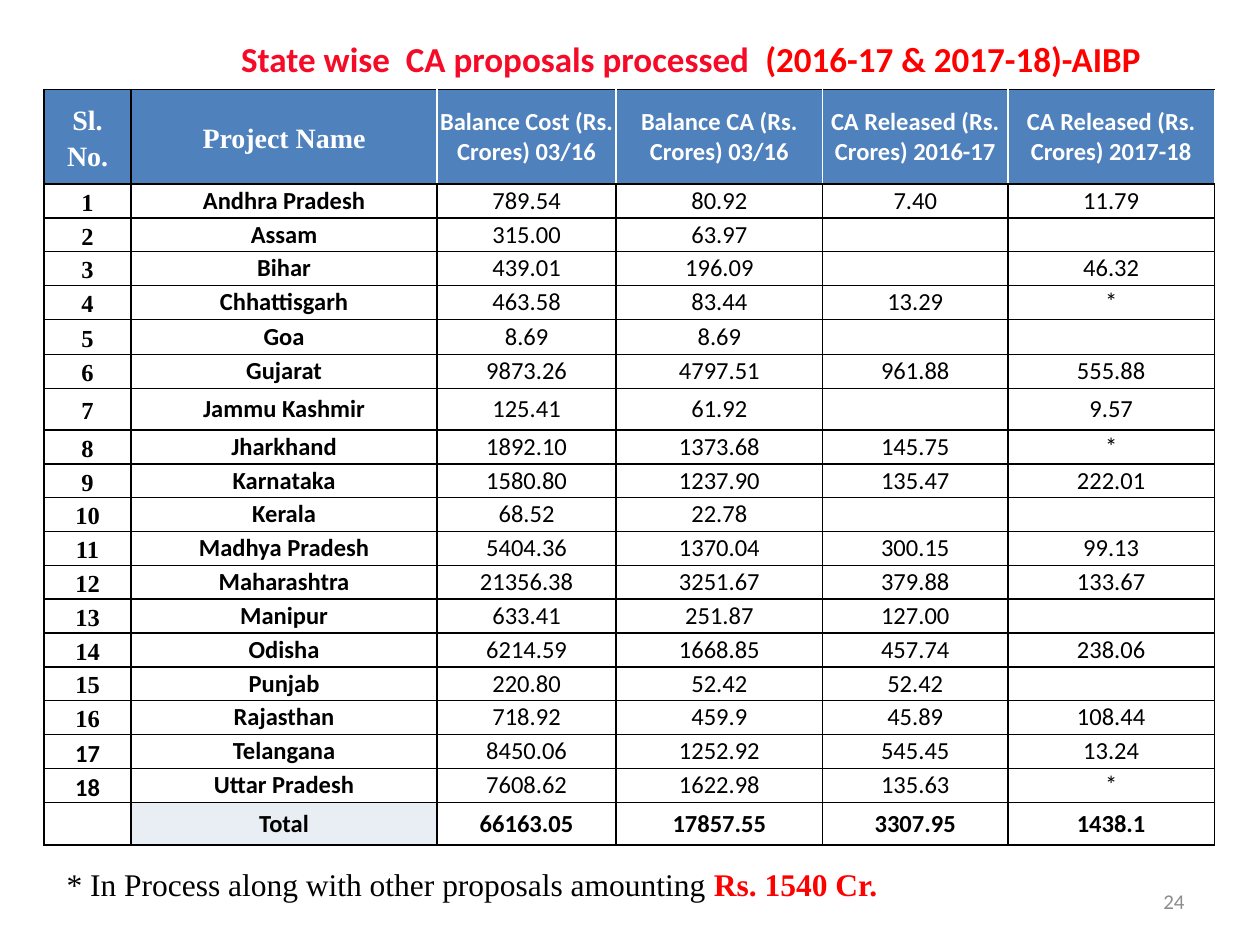
from lxml.etree import SubElement
from pptx import Presentation
from pptx.dml.color import RGBColor
from pptx.enum.text import MSO_ANCHOR, PP_ALIGN
from pptx.oxml.ns import qn
from pptx.util import Inches, Pt

SERIF, SANS = "Times New Roman", "Calibri"
BLACK, WHITE, RED, BLUE = "000000", "FFFFFF", "FF0000", "4F81BD"

COLS = [0.69, 2.43, 1.42, 1.64, 1.47, 1.64]
ROW_H = 0.26
TALL_ROWS = {0: 0.51, 1: 0.75, 6: 0.28, 8: 0.33, 18: 0.27, 19: 0.27, 20: 0.34}
TITLE = [("State wise  CA proposals processed ", "F50B27"),
         (" (2016-17 & 2017-18)-AIBP", RED)]
HEADER = ["Sl. No.", "Project Name", "Balance Cost (Rs. Crores) 03/16",
          "Balance CA (Rs. Crores) 03/16", "CA Released (Rs. Crores) 2016-17",
          "CA Released (Rs. Crores) 2017-18"]
STATES = [
    ("Andhra Pradesh", "789.54", "80.92", "7.40", "11.79"),
    ("Assam", "315.00", "63.97", "", ""),
    ("Bihar", "439.01", "196.09", "", "46.32"),
    ("Chhattisgarh", "463.58", "83.44", "13.29", "*"),
    ("Goa", "8.69", "8.69", "", ""),
    ("Gujarat", "9873.26", "4797.51", "961.88", "555.88"),
    ("Jammu Kashmir", "125.41", "61.92", "", "9.57"),
    ("Jharkhand", "1892.10", "1373.68", "145.75", "*"),
    ("Karnataka", "1580.80", "1237.90", "135.47", "222.01"),
    ("Kerala", "68.52", "22.78", "", ""),
    ("Madhya Pradesh", "5404.36", "1370.04", "300.15", "99.13"),
    ("Maharashtra", "21356.38", "3251.67", "379.88", "133.67"),
    ("Manipur", "633.41", "251.87", "127.00", ""),
    ("Odisha", "6214.59", "1668.85", "457.74", "238.06"),
    ("Punjab", "220.80", "52.42", "52.42", ""),
    ("Rajasthan", "718.92", "459.9", "45.89", "108.44"),
    ("Telangana", "8450.06", "1252.92", "545.45", "13.24"),
    ("Uttar Pradesh", "7608.62", "1622.98", "135.63", "*"),
]
TOTAL = ["", "Total", "66163.05", "17857.55", "3307.95", "1438.1"]


def rgb(color):
    return RGBColor.from_string(color)


def set_font(font, size, name, color, bold=False):
    font.size, font.name, font.bold = Pt(size), name, bold
    font.color.rgb = rgb(color)


def add_runs(p, parts):
    for text, color in parts:
        r = p.add_run()
        r.text = text
        r.font.color.rgb = rgb(color)


def set_borders(cell, left=BLACK, right=BLACK, top=BLACK, bottom=BLACK):
    tcPr = cell._tc.get_or_add_tcPr()
    sides = [("a:lnL", left), ("a:lnR", right), ("a:lnT", top), ("a:lnB", bottom)]
    for i, (tag, color) in enumerate(sides):
        ln = SubElement(tcPr, qn(tag), w=str(Pt(1)))
        fill = SubElement(ln, qn("a:solidFill"))
        SubElement(fill, qn("a:srgbClr"), val=color)
        tcPr.insert(i, ln)


def format_cell(cell, text, fill, size, name, color, bold, side=0.01, spacing=None):
    cell.fill.solid()
    cell.fill.fore_color.rgb = rgb(fill)
    cell.vertical_anchor = MSO_ANCHOR.MIDDLE
    cell.margin_left = cell.margin_right = Inches(side)
    cell.margin_top = cell.margin_bottom = 0
    p = cell.text_frame.paragraphs[0]
    p.alignment = PP_ALIGN.CENTER
    p.line_spacing = spacing
    set_font(p.font, size, name, color, bold)
    if text:
        p.add_run().text = text


def fill_title_row(table):
    last = len(COLS) - 1
    for c in range(last + 1):
        cell = table.cell(0, c)
        format_cell(cell, "", WHITE, 20, SANS, RED, True, 0.07, 1.15)
        set_borders(cell, WHITE, WHITE, WHITE)
    cell = table.cell(0, 0)
    cell.merge(table.cell(0, last))
    cell.margin_left = Inches(1.05)
    add_runs(cell.text_frame.paragraphs[0], TITLE)


def fill_header_row(table):
    for c, text in enumerate(HEADER):
        cell = table.cell(1, c)
        if c < 2:
            format_cell(cell, text, BLUE, 16, SERIF, WHITE, True, 0.07, 1.15)
        else:
            format_cell(cell, text, BLUE, 14, SANS, WHITE, True)
        set_borders(cell, left=WHITE if c > 1 else BLACK,
                    right=WHITE if c > 0 else BLACK)


def fill_body_row(table, row, values, number_font=SERIF, total=False):
    for c, text in enumerate(values):
        cell = table.cell(row, c)
        fill = "E9EDF4" if total and c == 1 else WHITE
        if c == 0:
            format_cell(cell, text, fill, 14, number_font, BLACK, True, 0.07, 1.15)
        else:
            format_cell(cell, text, fill, 14, SANS, BLACK, total or c == 1)
        set_borders(cell)


def add_state_table(s, x, y):
    count = len(STATES) + 3
    heights = [TALL_ROWS.get(i, ROW_H) for i in range(count)]
    table = s.shapes.add_table(count, len(COLS), x, y, Inches(sum(COLS)),
                               Inches(sum(heights))).table
    table.horz_banding = False
    for col, width in zip(table.columns, COLS):
        col.width = Inches(width)
    for row, height in zip(table.rows, heights):
        row.height = Inches(height)
    fill_title_row(table)
    fill_header_row(table)
    for n, values in enumerate(STATES, 1):
        fill_body_row(table, n + 1, [str(n), *values], SERIF if n < 17 else SANS)
    fill_body_row(table, count - 1, TOTAL, total=True)


def add_text(s, x, y, w, h, parts, size, name, align=PP_ALIGN.LEFT):
    tf = s.shapes.add_textbox(x, y, w, h).text_frame
    tf.word_wrap = True
    p = tf.paragraphs[0]
    p.alignment = align
    set_font(p.font, size, name, parts[0][1])
    add_runs(p, parts)
    return tf


def main():
    prs = Presentation()
    prs.slide_width, prs.slide_height = Inches(10), Inches(7.5)
    s = prs.slides.add_slide(prs.slide_layouts[6])
    number = add_text(s, Inches(7.17), Inches(6.95), Inches(2.33), Inches(0.4),
                      [("24", "8C8C8C")], 12, SANS, PP_ALIGN.RIGHT)
    number.vertical_anchor = MSO_ANCHOR.MIDDLE
    add_state_table(s, Inches(0.35), Inches(0.2))
    note = add_text(s, Inches(0.43), Inches(6.82), Inches(8.5), Inches(0.4),
                    [("* In Process along with other proposals amounting ", BLACK),
                     ("Rs. 1540 Cr.", RED)], 18, SERIF)
    note.paragraphs[0].runs[-1].font.bold = True
    prs.save("out.pptx")


if __name__ == "__main__":
    main()
